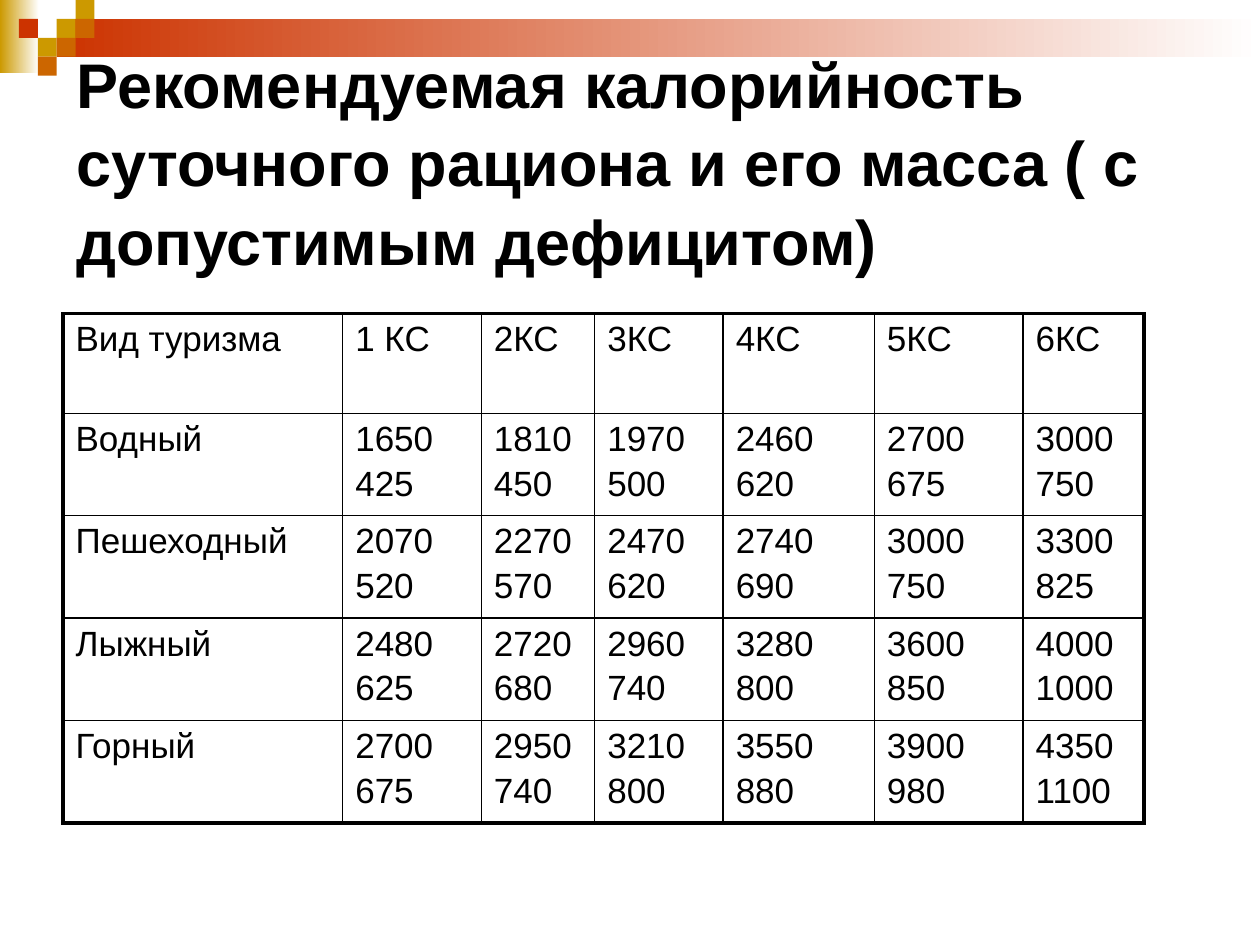
from lxml.etree import SubElement
from pptx import Presentation
from pptx.dml.color import RGBColor
from pptx.enum.shapes import MSO_SHAPE
from pptx.enum.text import MSO_ANCHOR
from pptx.oxml.ns import qn
from pptx.util import Inches, Pt

COLORS = {"gold": "CC9900", "orange": "CC6600", "red": "CC3300",
          "white": "FFFFFF", "black": "000000"}


def rgb(name):
    return RGBColor.from_string(COLORS[name])


class SlideBuilder:
    font = "Arial"
    thin, thick = 1, 2.25

    def __init__(self, slide):
        self.s = slide

    def rect(self, x, y, w, h, color, fade=False):
        sp = self.s.shapes.add_shape(MSO_SHAPE.RECTANGLE, Inches(x), Inches(y),
                                     Inches(w), Inches(h))
        sp.shadow.inherit = False
        sp.line.fill.background()
        if fade:
            sp.fill.gradient()
            sp.fill.gradient_angle = 0
            for stop, name, pos in zip(sp.fill.gradient_stops, (color, "white"), (0, 1)):
                stop.color.rgb = rgb(name)
                stop.position = pos
        else:
            sp.fill.solid()
            sp.fill.fore_color.rgb = rgb(color)

    def add_lines(self, tf, lines, size, bold=False, gap=0):
        for i, line in enumerate(lines):
            p = tf.add_paragraph() if i else tf.paragraphs[0]
            if i:
                p.space_before = Pt(gap)
            r = p.add_run()
            r.text = line
            r.font.name = self.font
            r.font.size = Pt(size)
            r.font.bold = bold
            r.font.color.rgb = rgb("black")

    def title(self, x, y, w, h, text, size):
        tf = self.s.shapes.add_textbox(Inches(x), Inches(y), Inches(w), Inches(h)).text_frame
        tf.word_wrap = True
        tf.vertical_anchor = MSO_ANCHOR.MIDDLE
        self.add_lines(tf, [text], size, bold=True)
        tf.paragraphs[0].line_spacing = 1.04

    def border(self, cell, side, width):
        tc_pr = cell._tc.get_or_add_tcPr()
        ln = SubElement(tc_pr, qn(f"a:ln{side}"), w=str(Pt(width)))
        fill = SubElement(ln, qn("a:solidFill"))
        SubElement(fill, qn("a:srgbClr"), val=COLORS["black"])

    def table(self, x, y, widths, heights, rows, size):
        last_row, last_col = len(rows) - 1, len(widths) - 1
        table = self.s.shapes.add_table(len(rows), len(widths), Inches(x), Inches(y),
                                        Inches(sum(widths)), Inches(sum(heights))).table
        table.first_row = table.horz_banding = False
        for col, width in zip(table.columns, widths):
            col.width = Inches(width)
        for i, (row, height) in enumerate(zip(rows, heights)):
            table.rows[i].height = Inches(height)
            for j, text in enumerate(row):
                cell = table.cell(i, j)
                self.add_lines(cell.text_frame, text.split("/"), size, gap=3.3)
                # Borders come before the fill in the cell properties
                outer = {"L": j == 0, "R": j == last_col, "T": i == 0, "B": i == last_row}
                for side, edge in outer.items():
                    self.border(cell, side, self.thick if edge else self.thin)
                cell.fill.background()


def main():
    prs = Presentation()
    prs.slide_width, prs.slide_height = Inches(10), Inches(7.5)
    b = SlideBuilder(prs.slides.add_slide(prs.slide_layouts[6]))

    # Fading bands and the mosaic of squares
    b.rect(0, 0, 0.31, 0.58, "gold", fade=True)
    b.rect(0.45, 0.15, 9.55, 0.3, "red", fade=True)
    unit = 0.15
    mosaic = [(3, 1, "gold"), (4, 0, "gold"), (4, 1, "orange"), (2, 2, "gold"),
              (1, 1, "red"), (3, 2, "orange"), (2, 3, "orange")]
    for col, row, color in mosaic:
        b.rect(col * unit, row * unit, unit, unit, color)

    # Title
    b.title(0.51, 0.52, 9, 1.5,
            "Рекомендуемая калорийность суточного рациона и его масса "
            "( с допустимым дефицитом)", 36)

    # Calories / mass by kind of tourism and difficulty category
    rows = [
        ["Вид туризма", "1 КС", "2КС", "3КС", "4КС", "5КС", "6КС"],
        ["Водный", "1650/425", "1810/450", "1970/500", "2460/620", "2700/675", "3000/750"],
        ["Пешеходный", "2070/520", "2270/570", "2470/620", "2740/690", "3000/750", "3300/825"],
        ["Лыжный", "2480/625", "2720/680", "2960/740", "3280/800", "3600/850", "4000/1000"],
        ["Горный", "2700/675", "2950/740", "3210/800", "3550/880", "3900/980", "4350/1100"],
    ]
    b.table(0.5, 2.49, [2.22, 1.1, 0.9, 1.02, 1.2, 1.18, 0.96],
            [0.79, 0.78, 0.78, 0.78, 0.79], rows, 20)

    prs.save("out.pptx")


if __name__ == "__main__":
    main()
